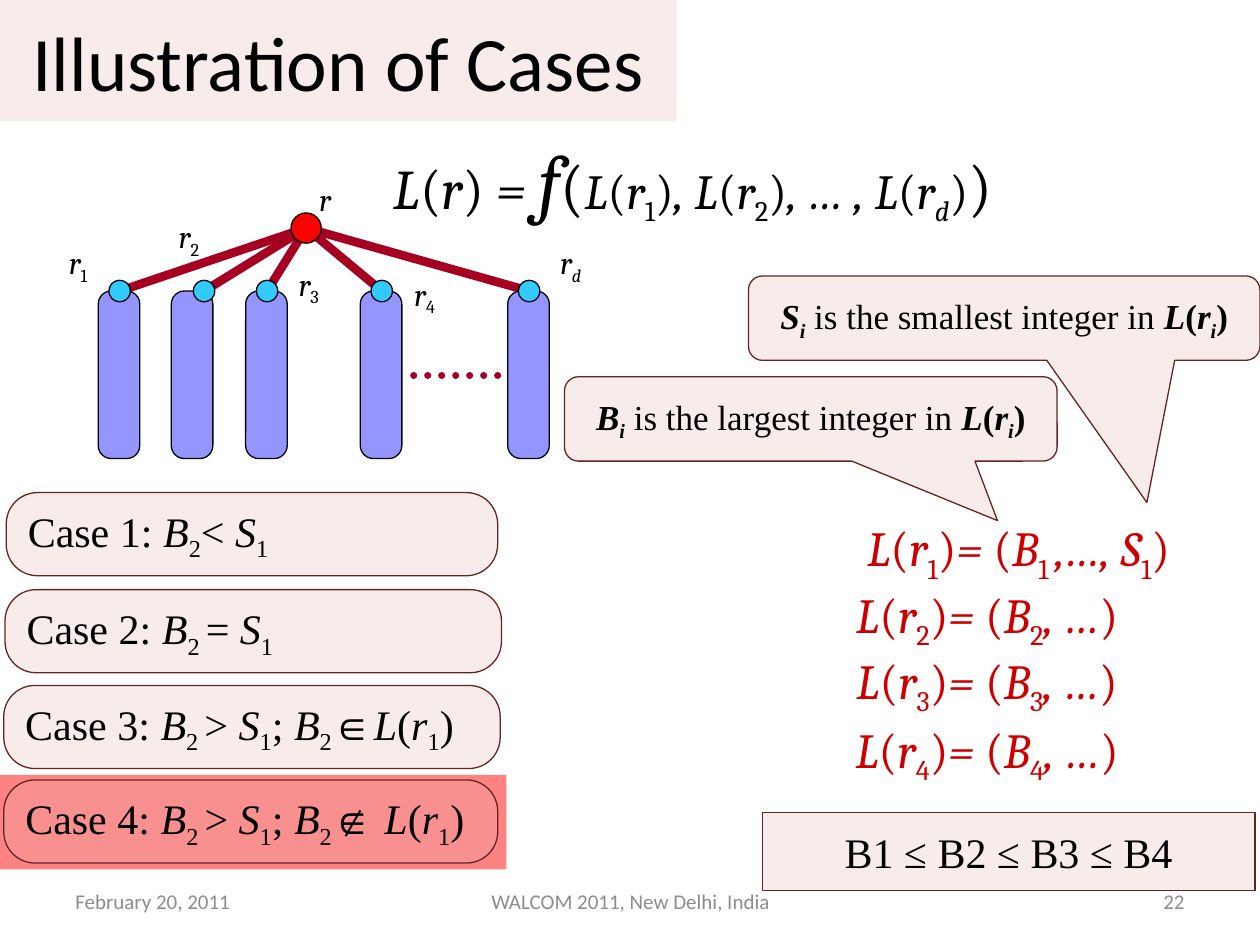
import pptx
import pptx.util
import pptx.dml.color
import pptx.enum.dml
import pptx.enum.shapes
import pptx.enum.text
import pptx.oxml
import pptx.oxml.ns
import lxml.etree

COLUMNS, ROWS = 10, 7.5
WIDTH, HEIGHT = pptx.util.Inches(10), pptx.util.Inches(7.5)
COLORS = {"ink": "000000", "footer": "8C8C8C", "formula": "CC0000",
          "panel": "E6B9B8", "border": "632523", "highlight": "FF0000",
          "edge": "A50021", "subtree": "9595FF", "child": "33CAFF"}
SHAPES = pptx.enum.shapes.MSO_SHAPE
ALIGN = {"left": pptx.enum.text.PP_ALIGN.LEFT,
         "center": pptx.enum.text.PP_ALIGN.CENTER,
         "right": pptx.enum.text.PP_ALIGN.RIGHT}


def color(name):
    return pptx.dml.color.RGBColor.from_string(COLORS[name])


def place(column, row):
    return int(WIDTH * column / COLUMNS), int(HEIGHT * row / ROWS)


def write(box, *parts, font="Cambria", size=28, ink="ink", align="center",
          wrap=True, hanging=0):
    """Each part is markup or (markup, size); * toggles italic, ~ subscript, ^ bold."""
    frame = box.text_frame
    frame.word_wrap = wrap
    frame.vertical_anchor = pptx.enum.text.MSO_ANCHOR.MIDDLE
    para = frame.paragraphs[0]
    para.alignment = ALIGN[align]
    if hanging:
        indent = pptx.util.Inches(hanging)
        properties = para._p.get_or_add_pPr()
        properties.set("marL", str(indent))
        properties.set("indent", str(-indent))
    state = {"*": False, "~": False, "^": False}

    def add_span(text, points):
        if not text:
            return
        span = para.add_run()
        span.text = text
        span.font.name = font
        span.font.size = pptx.util.Pt(points)
        span.font.color.rgb = color(ink)
        span.font.italic, span.font.bold = state["*"], state["^"]
        if state["~"]:
            span.font._element.set("baseline", "-25000")

    for part in parts:
        text, points = (part, size) if isinstance(part, str) else part
        pending = ""
        for letter in text:
            if letter in state:
                add_span(pending, points)
                pending = ""
                state[letter] = not state[letter]
            else:
                pending += letter
        add_span(pending, points)


def add_text(page, at, *parts, **style):
    box = page.shapes.add_textbox(*place(*at[:2]), *place(*at[2:]))
    write(box, *parts, **style)


def add_block(page, kind, at, fill, border=None, opacity=100, adjust=()):
    block = page.shapes.add_shape(kind, *place(*at[:2]), *place(*at[2:]))
    block.shadow.inherit = False
    for index, value in enumerate(adjust):
        block.adjustments[index] = value
    block.fill.solid()
    block.fill.fore_color.rgb = color(fill)
    if opacity < 100:
        tint = block.fill._xPr.find(".//" + pptx.oxml.ns.qn("a:srgbClr"))
        alpha = lxml.etree.SubElement(tint, pptx.oxml.ns.qn("a:alpha"))
        alpha.set("val", str(opacity * 1000))
    if border:
        block.line.color.rgb = color(border)
        block.line.width = pptx.util.Pt(0.75)
    else:
        block.line.fill.background()
    return block


def add_panel(page, kind, at, text, border="border", adjust=(), **style):
    panel = add_block(page, kind, at, "panel", border, 27, adjust)
    write(panel, text, **style)


def add_line(page, start, end, points, dotted=False):
    line = page.shapes.add_connector(pptx.enum.shapes.MSO_CONNECTOR.STRAIGHT,
                                     *place(*start), *place(*end))
    line.line.color.rgb = color("edge")
    line.line.width = pptx.util.Pt(points)
    if dotted:
        line.line.dash_style = pptx.enum.dml.MSO_LINE.ROUND_DOT
        line.line._ln.set("cap", "rnd")
    lxml.etree.SubElement(line._element.spPr, pptx.oxml.ns.qn("a:effectLst"))


def add_node(page, center, diameter, fill):
    left, top = (value - diameter / 2 for value in center)
    add_block(page, SHAPES.OVAL, (left, top, diameter, diameter), fill, "ink")


def add_tree(page):
    root, child_row = (2.43, 1.81), 2.31
    # child column, subtree column, label text, label position
    branches = [(0.95, 0.95, "1", (0.37, 1.81)), (1.62, 1.53, "2", (1.25, 1.6)),
                (2.12, 2.12, "3", (2.2, 1.98)), (3.03, 3.03, "4", (3.12, 2.06)),
                (4.2, 4.2, "*d", (4.28, 1.81))]
    for child, *_ in branches:
        add_line(page, root, (child, child_row), 5)
    for child, subtree, index, label in branches:
        add_block(page, SHAPES.ROUNDED_RECTANGLE,
                  (subtree - 0.17, child_row, 0.33, 1.33), "subtree", "ink",
                  adjust=[0.315])
        add_node(page, (child, child_row), 0.17, "child")
        add_text(page, (*label, 0.5, 0.58), f"*r*~{index}", size=18, wrap=False)
    add_line(page, (3.95, 2.98), (3.28, 2.98), 4, dotted=True)
    add_text(page, (2.33, 1.29, 0.5, 0.58), "*r", size=18, wrap=False)
    add_node(page, root, 0.24, "highlight")


def add_cases(page):
    add_block(page, SHAPES.RECTANGLE, (0, 6.15, 4.02, 0.75), "highlight", opacity=49)
    cases = [((0.05, 3.91, 3.9), "*B*~2~< *S*~1"),
             ((0.04, 4.68, 3.94), "*B*~2 ~= *S*~1"),
             ((0.03, 5.44, 3.94), "*B*~2 ~> *S*~1~; *B*~2~∈*L*(*r*~1~)"),
             ((0.03, 6.19, 3.92), "*B*~2 ~> *S*~1~; *B*~2~∉ *L*(*r*~1~)")]
    for number, (at, condition) in enumerate(cases, 1):
        add_panel(page, SHAPES.ROUNDED_RECTANGLE, (*at, 0.66),
                  f"Case {number}: {condition}", adjust=[0.375],
                  font="Times New Roman", size=24, align="left")


def add_label_lists(page):
    add_text(page, (6.17, 4, 3.83, 0.75),
             "*L*(*r*~1~)*= *(*B*~1 ~*,…, S*~1~)", ink="formula", wrap=False)
    for number, row in zip((2, 3, 4), (4.53, 5.05, 5.6)):
        add_text(page, (6.42, row, 2.83, 0.75),
                 f"*L*(*r*~{number}~)*= *(*B*~{number}~*, …*)",
                 ink="formula", wrap=False)


def add_callouts(page):
    callouts = [("B", "largest", (4.48, 2.99, 3.91, 0.67), (0.379, 1.204)),
                ("S", "smallest", (5.94, 2.19, 4.06, 0.67), (0.279, 2.184))]
    for letter, extreme, at, tip in callouts:
        add_panel(page, SHAPES.ROUNDED_RECTANGULAR_CALLOUT, at,
                  f"^*{letter}~i~*^ is the {extreme} integer in ^*L*(*r~i~*)",
                  adjust=(*tip, 0.167), font="Times New Roman", size=20,
                  hanging=0.5)


def add_footer(page):
    footers = [(0.5, 2.33, "left", "February 20, 2011"),
               (3.42, 3.17, "center", "WALCOM 2011, New Delhi, India"),
               (7.17, 2.33, "right", "22")]
    for column, width, align, text in footers:
        add_text(page, (column, 6.95, width, 0.4), text, font="Calibri",
                 size=12, ink="footer", align=align)


def add_recurrence(page):
    add_text(page, (2.75, 1.05, 5.5, 0.75), ("*L*(*r*) *= ", 32), ("f*", 44),
             ("(", 36), "*L*(*r*~1~)*, L*(*r*~2~)*, … , L*(*r~d~*)", (")", 36),
             wrap=False)


def main():
    deck = pptx.Presentation()
    deck.slide_width, deck.slide_height = WIDTH, HEIGHT
    page = deck.slides.add_slide(deck.slide_layouts[6])
    add_footer(page)
    add_cases(page)
    add_recurrence(page)
    add_tree(page)
    add_label_lists(page)
    add_panel(page, SHAPES.RECTANGLE, (0, 0, 5.37, 0.96),
              "Illustration of Cases", border=None, font="Calibri", size=44)
    add_callouts(page)
    add_panel(page, SHAPES.RECTANGLE, (6.05, 6.45, 3.91, 0.62),
              "B1 ≤ B2 ≤ B3 ≤ B4", font="Times New Roman", size=24)
    deck.save("out.pptx")


if __name__ == "__main__":
    main()
